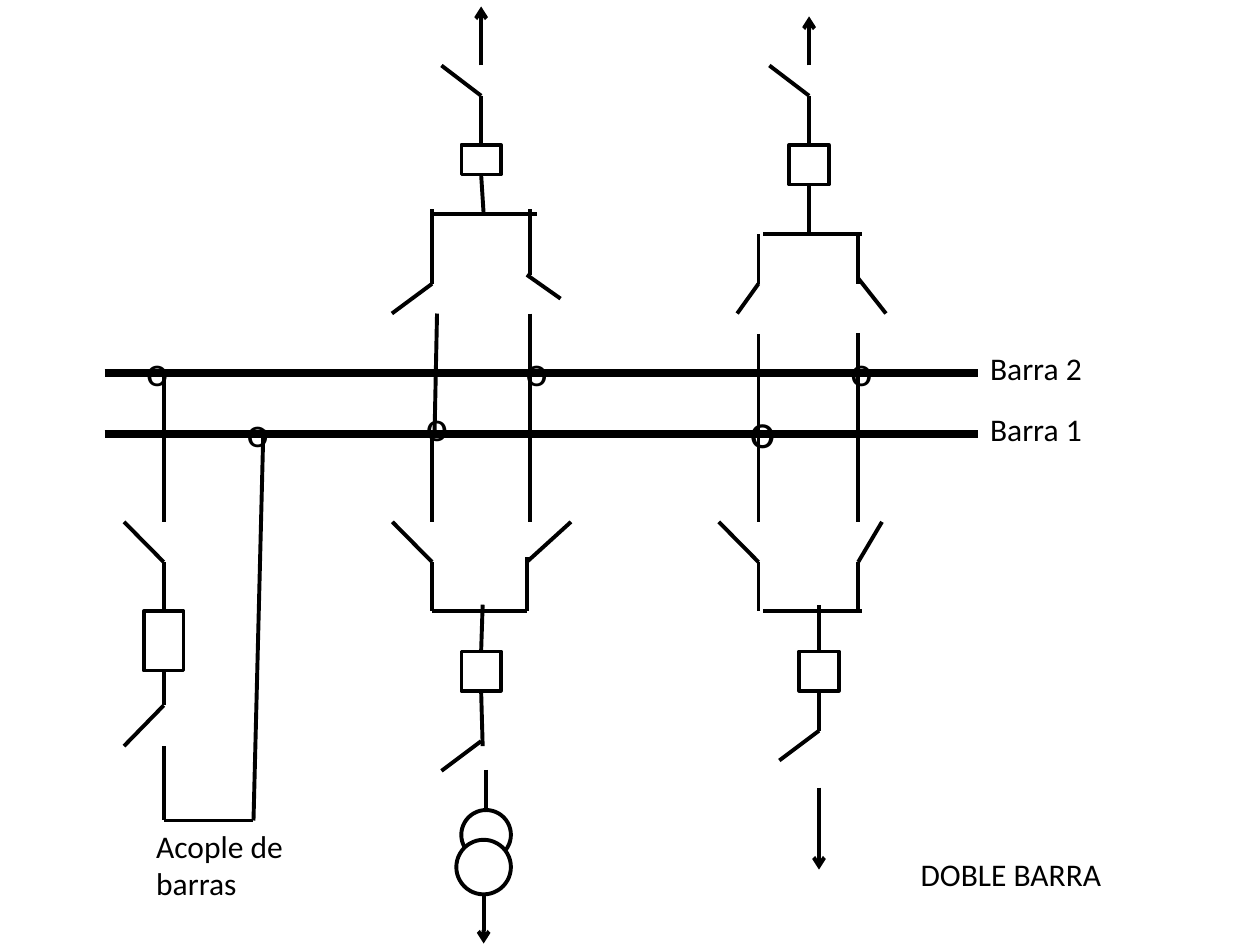
from collections import namedtuple

from lxml import etree
from pptx import Presentation
from pptx.dml.color import RGBColor
from pptx.enum.shapes import MSO_CONNECTOR, MSO_SHAPE
from pptx.enum.text import MSO_AUTO_SIZE
from pptx.oxml.ns import qn
from pptx.util import Cm, Pt

LINE = MSO_CONNECTOR.STRAIGHT
RECT = MSO_SHAPE.RECTANGLE
OVAL = MSO_SHAPE.OVAL
GROW = MSO_AUTO_SIZE.SHAPE_TO_FIT_TEXT
BLACK = "000000"
WHITE = "FFFFFF"

# Shared levels, in cm from the top of the slide
FEEDER_TIP, FEEDER_PIVOT, UPPER_BREAKER = 1.32, 1.93, 2.92
UPPER_PIVOT, UPPER_TIP = 5.72, 6.32
BAR_2, BAR_1 = 7.52, 8.74
LOWER_TIP, LOWER_PIVOT, LOWER_TIE = 10.52, 11.33, 12.32
LOWER_BREAKER = 13.13

# Shared sizes
BAR_LEFT, BAR_RIGHT = 2.11, 19.71
BREAKER = 0.8
BLADE_DX, BLADE_DY = 0.8, 0.6


def rgb(value):
    return RGBColor.from_string(value)


def wire(*points, width=2.25, arrow=False):
    """Join successive (x, y) points, in cm, with straight black lines."""
    for (x1, y1), (x2, y2) in zip(points, points[1:]):
        s = slide.shapes.add_connector(LINE, Cm(x1), Cm(y1), Cm(x2), Cm(y2))
        s.line.color.rgb = rgb(BLACK)
        s.line.width = Pt(width)
        if arrow:
            etree.SubElement(s.line._get_or_add_ln(), qn("a:tailEnd"), type="arrow")
        etree.SubElement(s._element.spPr, qn("a:effectLst"))


prs = Presentation()
prs.slide_width, prs.slide_height = Cm(25.4), Cm(19.05)
slide = prs.slides.add_slide(prs.slide_layouts[6])

for bar in (BAR_2, BAR_1):
    wire((BAR_LEFT, bar), (BAR_RIGHT, bar), width=4.5)

# A bay has a feeder above the bars and one below. Each feeder forks into a
# left leg, tied to bar 1, and a right leg, tied to bar 2.
# Fields ending in _at are (x, y) points, and ties are (left, right) extents.
Bay = namedtuple(
    "Bay",
    "left right top_feeder arrow_tip top_breaker_h top_stem_at top_tie leg_top "
    "right_leg_end left_blade_at right_pivot_at right_blade_at "
    "left_drop_at right_drop_top low_right low_leg_top low_blade_x low_tie "
    "low_feeder low_stem_x low_stem_end low_pivot",
)
middle_bay = Bay(
    left=8.71, right=10.69,
    top_feeder=9.7, arrow_tip=0.13, top_breaker_h=0.6,
    top_stem_at=(9.75, 4.32), top_tie=(8.71, 10.82), leg_top=4.22,
    right_leg_end=5.54, left_blade_at=(7.9, UPPER_TIP),
    right_pivot_at=(10.62, 5.54), right_blade_at=(11.3, 6.02),
    left_drop_at=(8.81, UPPER_TIP), right_drop_top=UPPER_TIP,
    low_right=10.62, low_leg_top=11.23, low_blade_x=11.51, low_tie=(8.71, 10.62),
    low_feeder=9.7, low_stem_x=9.73, low_stem_end=15.04, low_pivot=14.94,
)
right_bay = Bay(
    left=15.29, right=17.3,
    top_feeder=16.31, arrow_tip=0.33, top_breaker_h=BREAKER,
    top_stem_at=(16.31, 4.72), top_tie=(15.39, 17.37), leg_top=4.72,
    right_leg_end=UPPER_PIVOT, left_blade_at=(14.86, UPPER_TIP),
    right_pivot_at=(17.3, 5.61), right_blade_at=(17.86, UPPER_TIP),
    left_drop_at=(15.29, 6.73), right_drop_top=6.71,
    low_right=17.3, low_leg_top=LOWER_PIVOT, low_blade_x=17.78,
    low_tie=(15.39, 17.37),
    low_feeder=16.51, low_stem_x=16.51, low_stem_end=14.73, low_pivot=14.73,
)

symbols = []  # kind, centre x, top, width, height, line width
for bay in (middle_bay, right_bay):
    # Upper feeder: arrow, open switch, breaker
    x = bay.top_feeder
    wire((x, FEEDER_TIP), (x, bay.arrow_tip), arrow=True)
    wire((x - BLADE_DX, FEEDER_TIP), (x, FEEDER_PIVOT), (x, UPPER_BREAKER))
    wire((x, UPPER_BREAKER + bay.top_breaker_h), bay.top_stem_at)
    symbols.append((RECT, x, UPPER_BREAKER, BREAKER, bay.top_breaker_h, 2))

    # Upper fork: tie and two open switches
    tie_y = bay.top_stem_at[1]
    wire(*((end, tie_y) for end in bay.top_tie))
    wire((bay.left, bay.leg_top), (bay.left, UPPER_PIVOT), bay.left_blade_at)
    wire((bay.right, bay.leg_top), (bay.right, bay.right_leg_end))
    wire(bay.right_pivot_at, bay.right_blade_at)

    # Legs across the bars
    left_bar_x = (bay.left_drop_at[0] + bay.left) / 2
    wire(bay.left_drop_at, (left_bar_x, BAR_1))
    wire((bay.left, BAR_1), (bay.left, LOWER_TIP))
    wire((bay.right, bay.right_drop_top), (bay.right, BAR_2), (bay.right, LOWER_TIP))

    # Lower fork: two open switches and tie
    wire((bay.left - BLADE_DX, LOWER_TIP), (bay.left, LOWER_PIVOT), (bay.left, LOWER_TIE))
    wire((bay.low_blade_x, LOWER_TIP), (bay.low_right, LOWER_PIVOT))
    wire((bay.low_right, bay.low_leg_top), (bay.low_right, LOWER_TIE))
    wire(*((end, LOWER_TIE) for end in bay.low_tie))

    # Lower feeder: breaker and open switch
    x = bay.low_feeder
    wire((x, LOWER_BREAKER), (bay.low_stem_x, LOWER_TIE - 0.13))
    wire((x, LOWER_BREAKER + BREAKER), (bay.low_stem_x, bay.low_stem_end))
    wire((x, bay.low_pivot), (x - BLADE_DX, bay.low_pivot + BLADE_DY))
    symbols.append((RECT, x, LOWER_BREAKER, BREAKER, BREAKER, 2))

# The middle bay feeds a transformer, the right bay an outgoing line
winding_1_top, winding_2_top = 16.33, 16.93
winding_1, winding_2 = 1, 1.1
transformer_end = winding_2_top + winding_2
wire((9.8, 15.52), (9.8, winding_1_top))
wire((9.75, transformer_end), (9.75, 19.02), arrow=True)
symbols.append((OVAL, 9.8, winding_1_top, winding_1, winding_1, 2.25))
symbols.append((OVAL, 9.75, winding_2_top, winding_2, winding_2, 2.25))
wire((right_bay.low_feeder, 15.88), (right_bay.low_feeder, 17.53), arrow=True)

# Coupler: bar 2, switch, breaker, switch, and back up to bar 1
x, coupler_h, coupler_bottom = 3.3, 1.2, 16.54
blade_x = x - BLADE_DX
wire((x, BAR_2), (x, LOWER_TIP))
wire((blade_x, LOWER_TIP), (x, LOWER_PIVOT), (x, LOWER_TIE))
wire((x, LOWER_TIE + coupler_h), (x, 14.22), (blade_x, 15.04))
wire((x, 15.04), (x, coupler_bottom), (5.11, coupler_bottom), (5.31, BAR_1 - 0.08))
symbols.append((RECT, x, LOWER_TIE, BREAKER, coupler_h, 2))

for kind, centre, top, width, height, weight in symbols:
    s = slide.shapes.add_shape(
        kind, Cm(centre - width / 2), Cm(top), Cm(width), Cm(height)
    )
    s.shadow.inherit = False
    s.fill.solid()
    s.fill.fore_color.rgb = rgb(WHITE)
    s.line.color.rgb = rgb(BLACK)
    s.line.width = Pt(weight)

# Junction marks: centre x, top, width, height, text size
junctions = [
    (3.18, BAR_2 - 0.69, 0.97, 1.27, 24),
    (5.21, BAR_1 - 0.69, 0.97, 1.27, 24),
    (8.82, BAR_1 - 0.82, 0.97, 1.27, 24),
    (10.83, BAR_2 - 0.69, 0.97, 1.27, 24),
    (15.38, BAR_1 - 0.82, 1.04, 1.45, 28),
    (17.38, BAR_2 - 0.69, 0.97, 1.27, 24),
]
# Text, left, top, width, height, text size, wrap
texts = [
    ("o", centre - width / 2, top, width, height, size, False)
    for centre, top, width, height, size in junctions
]
texts += [
    ("Barra 1", BAR_RIGHT, BAR_1 - 0.6, 2.39, 1.02, 18, False),
    ("Barra 2", BAR_RIGHT, BAR_2 - 0.6, 2.39, 1.02, 18, True),
    ("Acople de barras", 2.9, coupler_bottom, 3.2, 1.8, 18, True),
    ("DOBLE BARRA", 18.31, 17.12, 4.19, 1.02, 18, False),
]
for text, left, top, width, height, size, wrap in texts:
    s = slide.shapes.add_textbox(Cm(left), Cm(top), Cm(width), Cm(height))
    tf = s.text_frame
    tf.word_wrap = wrap
    tf.auto_size = GROW
    tf.text = text
    r = tf.paragraphs[0].runs[0]
    r.font.name = "Calibri"
    r.font.size = Pt(size)
    r.font.color.rgb = rgb(BLACK)

prs.save("out.pptx")
